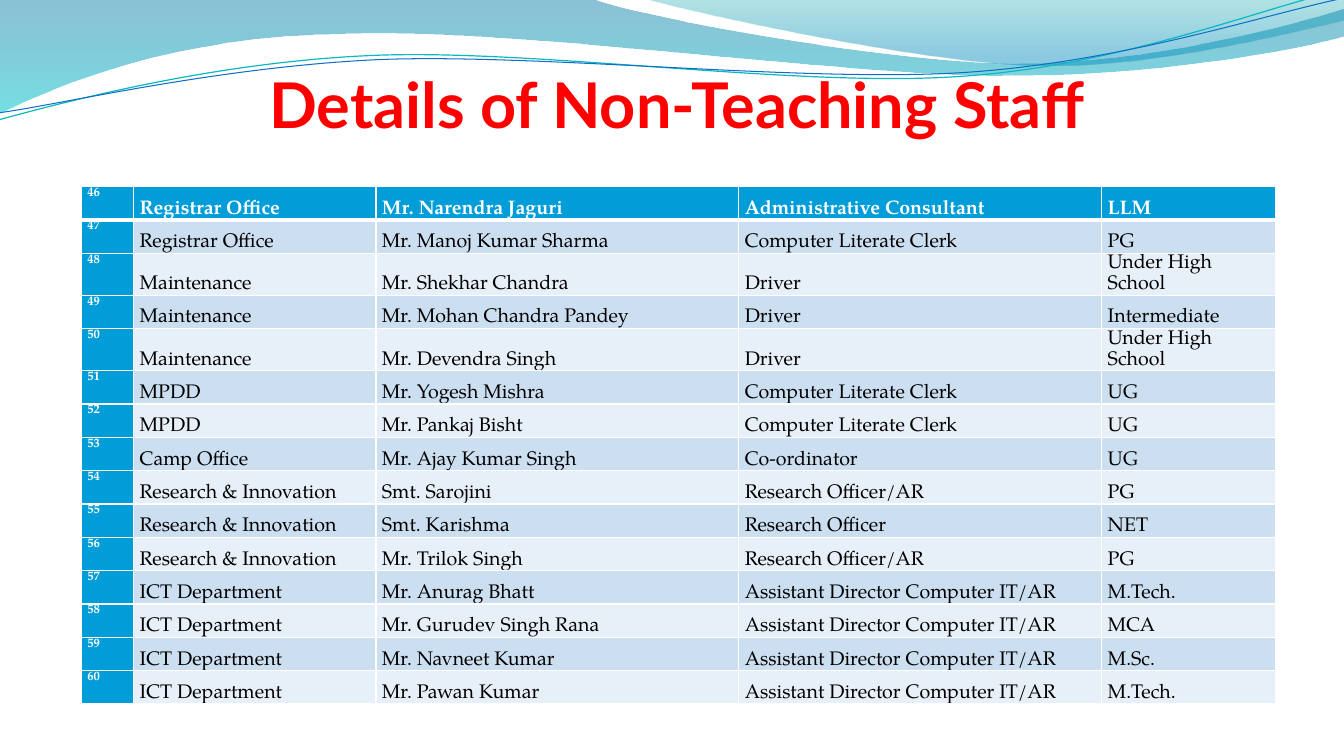
from lxml.etree import SubElement
from pptx import Presentation
from pptx.dml.color import RGBColor
from pptx.enum.text import MSO_ANCHOR, PP_ALIGN
from pptx.oxml.ns import qn
from pptx.util import Cm, Pt

WHITE = RGBColor(0xFF, 0xFF, 0xFF)
BLACK = RGBColor(0x00, 0x00, 0x00)
RED = RGBColor(0xFF, 0x00, 0x00)
BLUE = RGBColor(0x00, 0x9D, 0xD9)
DARK = RGBColor(0xCC, 0xDF, 0xF1)
PALE = RGBColor(0xE7, 0xEF, 0xF8)
AQUA = RGBColor(0x0A, 0xB8, 0xBF)
ROYAL = RGBColor(0x0F, 0x6F, 0xC6)
STEEL = RGBColor(0x00, 0x74, 0xA1)
CYAN = RGBColor(0x00, 0xC6, 0xCF)
TEAL = RGBColor(0x00, 0xA1, 0xA9)
AZURE = RGBColor(0x00, 0x8B, 0xBF)

# Wave outlines in cm: start point, then points (2 numbers) or curves (6)
BANDS = [
    ([(0, 0), (14.91, -0.03),
      (16.1, 0.43, 22.48, 1.6, 25.68, 1.6),
      (28.91, 1.6, 32.46, 0.66, 33.86, 0.23), (33.91, 0.91),
      (33.3, 1.12, 29.46, 1.93, 25.25, 1.91),
      (21.06, 1.91, 12.93, 0.71, 8.71, 0.86),
      (4.37, 0.91, 1.55, 2.11, -0.03, 2.87)],
     [(0, STEEL, 45), (1, CYAN, 55)]),
    ([(16.23, -0.03),
      (17.25, 0.28, 23.09, 1.57, 26.04, 1.65),
      (28.98, 1.75, 32.56, 0.81, 33.86, 0.53), (33.86, 0)],
     [(0, TEAL, 30), (0.8, AZURE, 45)]),
]
LINES = [
    ([(-0.03, 3.02),
      (1.63, 2.57, 5.36, 1.57, 9.37, 1.4),
      (13.39, 1.22, 20.07, 2.21, 24.13, 1.93),
      (28.19, 1.68, 31.8, 0.2, 33.81, -0.25)], AQUA, 0.85),
    ([(0, 2.84),
      (1.6, 2.62, 5.54, 1.68, 9.6, 1.5),
      (13.64, 1.35, 20.22, 2.08, 24.26, 1.83),
      (28.32, 1.57, 31.88, 0.36, 33.88, -0.05)], ROYAL, 0.75),
]

FIRST = 46
COLS = [1.32, 6.1, 9.14, 9.14, 4.37]
LONG = "Under High School"
STAFF = [
    ("Registrar Office", "Mr. Narendra Jaguri", "Administrative Consultant", "LLM"),
    ("Registrar Office", "Mr. Manoj Kumar Sharma", "Computer Literate Clerk", "PG"),
    ("Maintenance", "Mr. Shekhar Chandra", "Driver", LONG),
    ("Maintenance", "Mr. Mohan Chandra Pandey", "Driver", "Intermediate"),
    ("Maintenance", "Mr. Devendra Singh", "Driver", LONG),
    ("MPDD", "Mr. Yogesh Mishra", "Computer Literate Clerk", "UG"),
    ("MPDD", "Mr. Pankaj Bisht", "Computer Literate Clerk", "UG"),
    ("Camp Office", "Mr. Ajay Kumar Singh", "Co-ordinator", "UG"),
    ("Research & Innovation", "Smt. Sarojini", "Research Officer/AR", "PG"),
    ("Research & Innovation", "Smt. Karishma", "Research Officer", "NET"),
    ("Research & Innovation", "Mr. Trilok Singh", "Research Officer/AR", "PG"),
    ("ICT Department", "Mr. Anurag Bhatt", "Assistant Director Computer IT/AR", "M.Tech."),
    ("ICT Department", "Mr. Gurudev Singh Rana", "Assistant Director Computer IT/AR", "MCA"),
    ("ICT Department", "Mr. Navneet Kumar", "Assistant Director Computer IT/AR", "M.Sc."),
    ("ICT Department", "Mr. Pawan Kumar", "Assistant Director Computer IT/AR", "M.Tech."),
]


def write(frame, text, size=14, font="TeX Gyre Pagella", color=BLACK,
          bold=False, align=PP_ALIGN.LEFT, space=1.0):
    para = frame.paragraphs[0]
    para.alignment = align
    para.line_spacing = space
    run = para.add_run()
    run.text = text
    run.font.size = Pt(size)
    run.font.name = font
    run.font.color.rgb = color
    run.font.bold = bold


def outline(slide, left, top, steps, close):
    points = [(Cm(left + x), Cm(top + y))
              for step in steps for x, y in zip(step[::2], step[1::2])]
    pen = slide.shapes.build_freeform(*points[0])
    pen.add_line_segments(points[1:], close=close)
    shape = pen.convert_to_shape()
    shape.shadow.inherit = False
    # Join each three segments of a curve into one Bezier
    parts = iter(list(shape._element.iter(qn("a:lnTo"))))
    for step in steps[1:]:
        group = [next(parts) for _ in step[::2]]
        if len(group) == 3:
            home = group[0].getparent()
            curve = SubElement(home, qn("a:cubicBezTo"))
            group[0].addprevious(curve)
            for part in group:
                curve.append(part[0])
                home.remove(part)
    return shape


def add_waves(slide, left, top):
    # Shaded bands
    for steps, stops in BANDS:
        band = outline(slide, left, top, steps, True)
        band.line.fill.background()
        band.fill.gradient()
        band.fill.gradient_angle = 270
        for stop, (place, color, _) in zip(band.fill.gradient_stops, stops):
            stop.position = place
            stop.color.rgb = color
        tints = band._element.spPr.iter(qn("a:srgbClr"))
        for tint, (_, _, alpha) in zip(tints, stops):
            SubElement(tint, qn("a:alpha"), val=str(alpha * 1000))
    # Thin lines
    for steps, color, width in LINES:
        line = outline(slide, left, top, steps, False)
        line.fill.background()
        line.line.color.rgb = color
        line.line.width = Pt(width)


def add_title(slide, left, top, width, height):
    box = slide.shapes.add_textbox(Cm(left), Cm(top), Cm(width), Cm(height))
    frame = box.text_frame
    frame.word_wrap = True
    frame.vertical_anchor = MSO_ANCHOR.BOTTOM
    frame.margin_left = frame.margin_right = frame.margin_bottom = 0
    frame.margin_top = Cm(0.13)
    write(frame, "Details of Non-Teaching Staff", size=45, font="Lato",
          color=RED, bold=True, align=PP_ALIGN.CENTER)


def edge(cell, **widths):
    props = cell._tc.get_or_add_tcPr()
    for spot, side in enumerate("LRTB"):
        line = SubElement(props, qn("a:ln" + side),
                          w=str(Pt(widths.get(side, 1))))
        fill = SubElement(line, qn("a:solidFill"))
        SubElement(fill, qn("a:srgbClr"), val=str(WHITE))
        props.insert(spot, line)


def add_staff(slide, left, top, width, height):
    table = slide.shapes.add_table(
        len(STAFF), len(COLS), Cm(left), Cm(top), Cm(width), Cm(height)).table
    table.first_col = True
    for col, size in zip(table.columns, COLS):
        col.width = Cm(width * size / sum(COLS))
    for r, person in enumerate(STAFF):
        table.rows[r].height = Cm(height / len(STAFF))
        for c, text in enumerate((str(FIRST + r), *person)):
            cell = table.cell(r, c)
            head = r == 0 or c == 0
            cell.margin_left = cell.margin_right = Cm(0.15)
            cell.margin_top = cell.margin_bottom = 0
            cell.vertical_anchor = MSO_ANCHOR.BOTTOM if c else MSO_ANCHOR.TOP
            cell.fill.solid()
            cell.fill.fore_color.rgb = BLUE if head else DARK if r % 2 else PALE
            edge(cell, T=3 if r == 1 else 1, B=3 if r == 0 else 1)
            # Two-line text is set tight to keep its row low
            write(cell.text_frame, text, size=14 if c else 9, bold=head,
                  color=WHITE if head else BLACK,
                  space=Pt(15) if text == LONG else 1.07)


def main():
    deck = Presentation()
    deck.slide_width = Cm(33.87)
    deck.slide_height = Cm(19.05)
    slide = deck.slides.add_slide(deck.slide_layouts[6])
    add_waves(slide, 0, 0)
    add_title(slide, 3.72, 2.11, 26.67, 1.45)
    add_staff(slide, 2.05, 4.7, 30.09, 12.6)
    deck.save("out.pptx")


if __name__ == "__main__":
    main()
